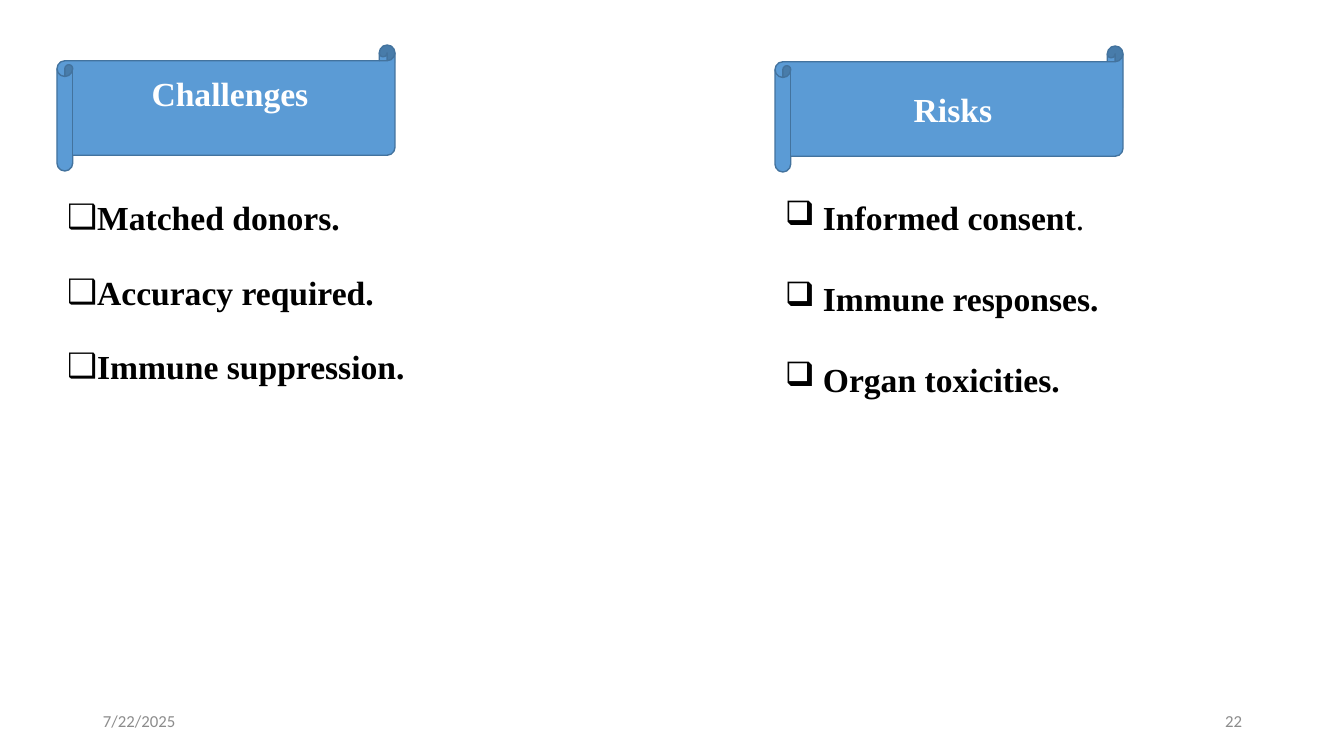
from lxml import etree
from pptx import Presentation
from pptx import util as u
from pptx.dml.color import RGBColor
from pptx.enum import shapes, text
from pptx.oxml import ns

PX = 9071  # EMU per px, 100.8 px to the inch
BLACK = RGBColor(0x00, 0x00, 0x00)
WHITE = RGBColor(0xFF, 0xFF, 0xFF)
GREY = RGBColor(0x8C, 0x8C, 0x8C)
BLUE = RGBColor(0x5B, 0x9B, 0xD5)
DARK_BLUE = RGBColor(0x43, 0x73, 0x9E)
SERIF = "Times New Roman"
SANS = "Calibri"


def px(*lengths):
    return [n * PX for n in lengths]


def format_run(r, size, font, color, bold=False):
    r.font.size = u.Pt(size)
    r.font.name = font
    r.font.color.rgb = color
    r.font.bold = bold


def set_bullet(p, indent):
    pPr = p._p.get_or_add_pPr()
    pPr.set("marL", str(indent * PX))
    pPr.set("indent", str(-indent * PX))
    etree.SubElement(pPr, ns.qn("a:buChar")).set("char", "❑")


def fill_list(tf, items, indent, line_spacing, space_before):
    """Write bulleted items, each a list of (words, bold) runs."""
    tf.word_wrap = True
    tf.auto_size = text.MSO_AUTO_SIZE.NONE
    for i, runs in enumerate(items):
        p = tf.add_paragraph() if i else tf.paragraphs[0]
        p.line_spacing = line_spacing
        p.space_before = u.Pt(space_before)
        set_bullet(p, indent)
        for words, bold in runs:
            r = p.add_run()
            r.text = words
            format_run(r, 24, SERIF, BLACK, bold)


def add_scroll(s, heading, box, bottom_inset=5):
    sp = s.shapes.add_shape(shapes.MSO_SHAPE.HORIZONTAL_SCROLL, *px(*box))
    sp.shadow.inherit = False
    sp.fill.solid()
    sp.fill.fore_color.rgb = BLUE
    sp.line.color.rgb = DARK_BLUE
    sp.line.width = u.Pt(1)
    tf = sp.text_frame
    tf.text = heading
    tf.vertical_anchor = text.MSO_ANCHOR.MIDDLE
    tf.margin_bottom = bottom_inset * PX
    p = tf.paragraphs[0]
    p.alignment = text.PP_ALIGN.CENTER
    format_run(p.runs[0], 24, SERIF, WHITE, bold=True)


def add_footer(s, words, left, align):
    tf = s.shapes.add_textbox(*px(left, 701, 302, 40)).text_frame
    tf.word_wrap = True
    tf.vertical_anchor = text.MSO_ANCHOR.MIDDLE
    tf.text = words
    p = tf.paragraphs[0]
    p.alignment = align
    format_run(p.runs[0], 12, SANS, GREY)


def main():
    prs = Presentation()
    prs.slide_width, prs.slide_height = px(1344, 756)
    s = prs.slides.add_slide(prs.slide_layouts[1])
    title = s.shapes.title
    title._element.getparent().remove(title._element)

    challenges = s.placeholders[1]
    challenges.left, challenges.top, challenges.width, challenges.height = px(57, 172, 397, 296)
    fill_list(challenges.text_frame,
              [[("Matched donors.", True)],
               [("Accuracy required.", True)],
               [("Immune suppression.", True)]],
              indent=25, line_spacing=1.5, space_before=10)

    risks = s.shapes.add_textbox(*px(775, 152, 500, 254))
    fill_list(risks.text_frame,
              [[("Informed consent", True), (".", False)],
               [("Immune responses.", True)],
               [("Organ toxicities.", True)]],
              indent=38, line_spacing=2.0, space_before=0)

    add_footer(s, "22", 950, text.PP_ALIGN.RIGHT)
    add_footer(s, "7/22/2025", 93, text.PP_ALIGN.LEFT)

    add_scroll(s, "Challenges", (57, 45, 338, 126), bottom_inset=35)
    add_scroll(s, "Risks", (775, 46, 348, 126))
    prs.save("out.pptx")


if __name__ == "__main__":
    main()
